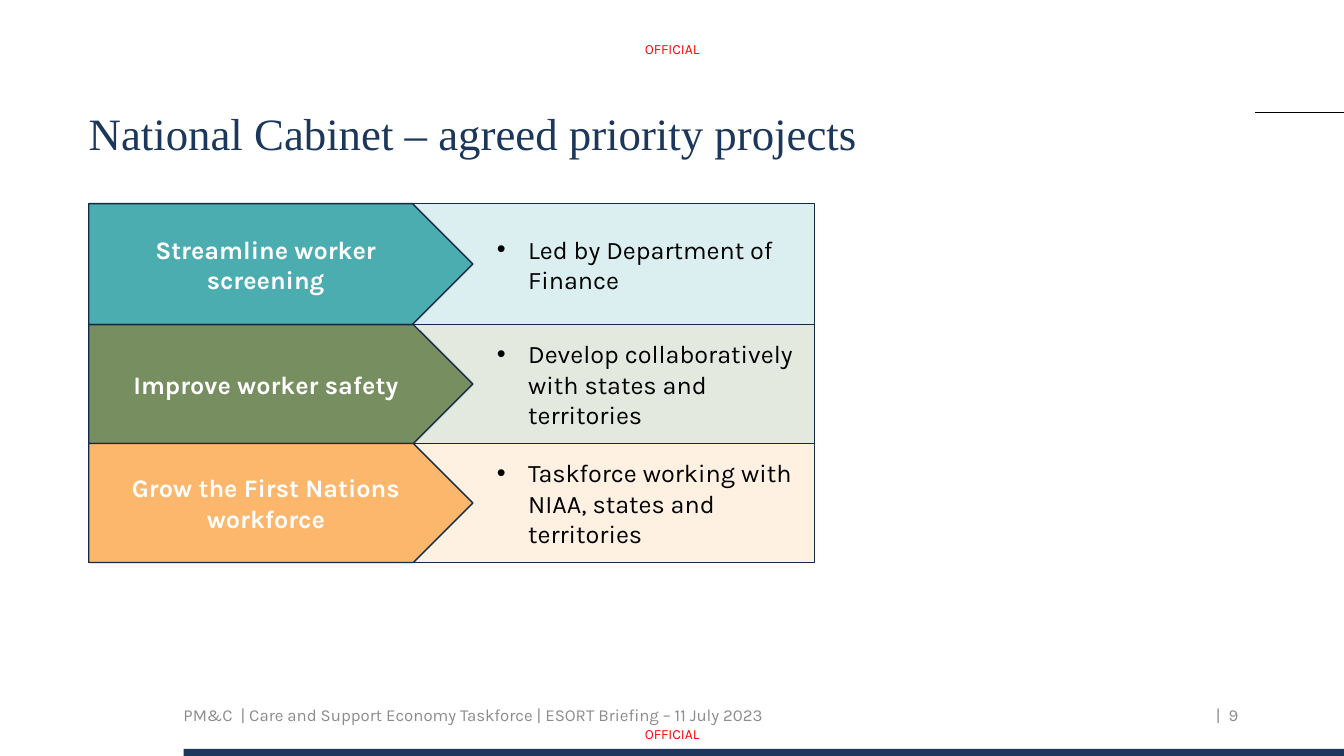
from dataclasses import dataclass

from lxml.etree import SubElement
from pptx import Presentation
from pptx.dml.color import RGBColor
from pptx.enum.shapes import MSO_CONNECTOR, MSO_SHAPE as SHAPE
from pptx.enum.text import MSO_ANCHOR as ANCHOR, PP_ALIGN as ALIGN
from pptx.oxml.ns import qn
from pptx.util import Inches, Pt


@dataclass(frozen=True)
class Theme:
    heading_font: str = "Times New Roman"
    body_font: str = "Karla"
    title_size: int = 32
    body_size: int = 18
    footer_size: int = 12
    marking_size: int = 10
    navy: str = "1B375C"
    outline: str = "142944"
    grey: str = "8C8C8C"
    red: str = "FF0000"
    black: str = "000000"
    white: str = "FFFFFF"


THEME = Theme()

LEFT = 0.88
ARROW_WIDTH = 3.81
PANEL_LEFT, PANEL_WIDTH = 3.33, 4.75
ROWS_TOP = 2.02

# arrow text, panel text, arrow fill, panel fill, height
PROJECTS = [
    ("Streamline worker screening", "Led by Department of Finance",
     "4BADB0", "DBEFF0", 1.2),
    ("Improve worker safety", "Develop collaboratively with states and territories",
     "778E61", "E4E9DF", 1.18),
    ("Grow the First Nations workforce", "Taskforce working with NIAA, states and territories",
     "FCB76C", "FEF1E2", 1.18),
]


def rgb(value):
    return RGBColor.from_string(value)


def write(shape, text, *, size=THEME.body_size, color=THEME.black, font=THEME.body_font,
          bold=False, align=ALIGN.LEFT, anchor=ANCHOR.MIDDLE, spacing=None):
    """Fill the shape with one formatted paragraph and return that paragraph."""
    tf = shape.text_frame
    tf.word_wrap = True
    tf.vertical_anchor = anchor
    p = tf.paragraphs[0]
    p.alignment = align
    p.line_spacing = spacing
    r = p.add_run()
    r.text = text
    r.font.name = font
    r.font.size = Pt(size)
    r.font.bold = bold
    r.font.color.rgb = rgb(color)
    return p


def add_label(s, text, left, top, width, height, **text_format):
    """Add a text box without insets."""
    box = s.shapes.add_textbox(Inches(left), Inches(top), Inches(width), Inches(height))
    tf = box.text_frame
    tf.margin_left = tf.margin_top = tf.margin_right = tf.margin_bottom = 0
    return write(box, text, **text_format)


def add_block(s, kind, left, top, width, height, fill, outline=None):
    sp = s.shapes.add_shape(kind, Inches(left), Inches(top), Inches(width), Inches(height))
    sp.shadow.inherit = False
    sp.fill.solid()
    sp.fill.fore_color.rgb = rgb(fill)
    if outline:
        sp.line.color.rgb = rgb(outline)
        sp.line.width = Pt(1)
    else:
        sp.line.fill.background()
    return sp


def add_bullet(p, indent, hanging):
    pPr = p._p.get_or_add_pPr()
    pPr.set("marL", str(Inches(indent)))
    pPr.set("indent", str(-Inches(hanging)))
    SubElement(pPr, qn("a:buFont")).set("typeface", "Arial")
    SubElement(pPr, qn("a:buChar")).set("char", "•")


def add_rule(s, left, right, y):
    line = s.shapes.add_connector(MSO_CONNECTOR.STRAIGHT, Inches(left), Inches(y),
                                  Inches(right), Inches(y))
    line.line.color.rgb = rgb(THEME.black)
    line.line.width = Pt(0.5)
    SubElement(line._element.spPr, qn("a:effectLst"))


def add_project(s, top, arrow_text, panel_text, arrow_fill, panel_fill, height):
    panel = add_block(s, SHAPE.RECTANGLE, PANEL_LEFT, top, PANEL_WIDTH, height,
                      panel_fill, THEME.outline)
    p = write(panel, panel_text)
    p.level = 3
    p.space_before, p.space_after = Pt(4), Pt(6)
    add_bullet(p, 1.81, 0.31)
    arrow = add_block(s, SHAPE.PENTAGON, LEFT, top, ARROW_WIDTH, height,
                      arrow_fill, THEME.outline)
    write(arrow, arrow_text, color=THEME.white, bold=True, align=ALIGN.CENTER)


def add_frame(s):
    """Add the rule, bottom bar, footer and security markings."""
    add_rule(s, 12.45, 13.33, 1.11)
    add_block(s, SHAPE.RECTANGLE, 1.82, 7.43, 11.51, 0.07, THEME.navy)
    footer = "PM&C  | Care and Support Economy Taskforce | ESORT Briefing – 11 July 2023"
    for text, left, width in ((footer, 1.82, 5.87), ("|  9", 12.06, 0.4)):
        add_label(s, text, left, 6.97, width, 0.25,
                  size=THEME.footer_size, color=THEME.grey)
    for top in (0.42, 7.22):
        p = add_label(s, "OFFICIAL", 5.87, top, 1.59, 0.16, size=THEME.marking_size,
                      color=THEME.red, align=ALIGN.CENTER, anchor=ANCHOR.TOP, spacing=0.9)
        p.space_before = Pt(10)


def main():
    prs = Presentation()
    prs.slide_width, prs.slide_height = Inches(13.33), Inches(7.5)
    s = prs.slides.add_slide(prs.slide_layouts[6])
    add_frame(s)
    add_label(s, "National Cabinet – agreed priority projects", LEFT, 1.11, 11.58, 0.91,
              size=THEME.title_size, color=THEME.navy, font=THEME.heading_font,
              anchor=ANCHOR.TOP, spacing=0.9)
    top = ROWS_TOP
    for project in PROJECTS:
        add_project(s, top, *project)
        top += project[-1]
    prs.save("out.pptx")


if __name__ == "__main__":
    main()
